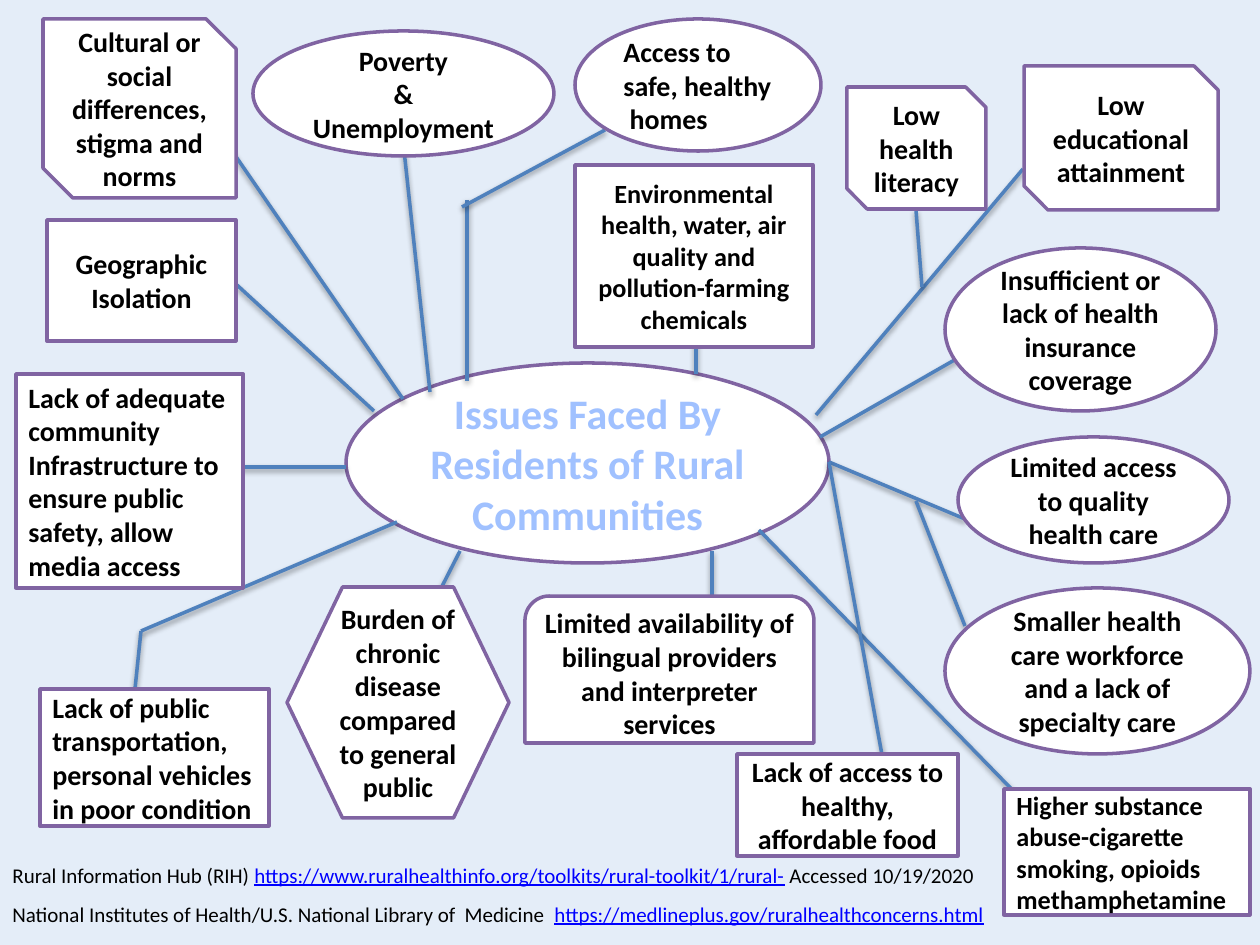
from typing import NamedTuple

from lxml import etree
from pptx import Presentation
from pptx.dml.color import RGBColor
from pptx.enum.shapes import MSO_CONNECTOR as CONN, MSO_SHAPE as SHAPE
from pptx.enum.text import MSO_ANCHOR as ANCHOR, PP_ALIGN as ALIGN
from pptx.oxml import parse_xml
from pptx.util import Emu, Pt

PX = 914400 / 126
NS = "http://schemas.openxmlformats.org/drawingml/2006/main"
SHADOW = (
    f'<a:effectLst xmlns:a="{NS}">'
    '<a:outerShdw blurRad="40000" dist="20000" dir="5400000" rotWithShape="0">'
    '<a:srgbClr val="000000"><a:alpha val="38000"/></a:srgbClr>'
    '</a:outerShdw></a:effectLst>'
)
BLACK, BLUE, PURPLE = "000000", "4F81BD", "8064A2"
LINK = {"color": "0000FF", "underline": True}


class Box(NamedTuple):
    kind: SHAPE
    x: int
    y: int
    w: int
    h: int
    text: str
    size: int = 16
    align: ALIGN = ALIGN.CENTER
    color: str = BLACK


class Link(NamedTuple):
    x1: int
    y1: int
    x2: int
    y2: int


class Source(NamedTuple):
    y: int
    w: int
    runs: list


TOPIC = Box(SHAPE.OVAL, 346, 363, 483, 200,
            "Issues Faced By Residents of Rural Communities", 24, color="A0C1FF")

ISSUES = [
    Box(SHAPE.SNIP_2_DIAG_RECTANGLE, 43, 19, 193, 179,
        "Cultural or social differences, stigma and norms"),
    Box(SHAPE.OVAL, 253, 31, 301, 125, "Poverty\n&\nUnemployment"),
    Box(SHAPE.OVAL, 575, 19, 246, 132, "Access to safe, healthy\v homes",
        align=ALIGN.LEFT),
    Box(SHAPE.SNIP_2_DIAG_RECTANGLE, 847, 87, 139, 122, "Low health literacy"),
    Box(SHAPE.SNIP_2_DIAG_RECTANGLE, 1024, 66, 194, 144,
        "Low educational attainment"),
    Box(SHAPE.RECTANGLE, 47, 220, 189, 121, "Geographic\nIsolation"),
    Box(SHAPE.RECTANGLE, 575, 165, 238, 182,
        "Environmental health, water, air quality and "
        "pollution-farming chemicals", 15),
    Box(SHAPE.OVAL, 945, 248, 271, 163,
        "Insufficient or lack of health insurance coverage"),
    Box(SHAPE.RECTANGLE, 16, 374, 227, 214,
        "Lack of adequate community Infrastructure to\n"
        "ensure public safety, allow media access", align=ALIGN.LEFT),
    Box(SHAPE.OVAL, 958, 437, 271, 126, "Limited access to quality health care"),
    Box(SHAPE.HEXAGON, 287, 587, 222, 231,
        "Burden of chronic disease compared to general public"),
    Box(SHAPE.ROUND_2_SAME_RECTANGLE, 525, 596, 289, 147,
        "Limited availability of bilingual providers and interpreter services"),
    Box(SHAPE.OVAL, 945, 588, 305, 166,
        "Smaller health care workforce and a lack of specialty care"),
    Box(SHAPE.RECTANGLE, 40, 689, 229, 137,
        "Lack of public transportation, personal vehicles in poor condition",
        align=ALIGN.LEFT),
    Box(SHAPE.RECTANGLE, 737, 754, 221, 102,
        "Lack of access to healthy, affordable food"),
    Box(SHAPE.RECTANGLE, 1004, 789, 246, 126,
        "Higher substance\nabuse-cigarette smoking, opioids methamphetamine",
        15, ALIGN.LEFT),
]

LINKS = [
    Link(237, 285, 374, 411), Link(404, 150, 430, 392),
    Link(816, 415, 1023, 169), Link(922, 287, 916, 210),
    Link(397, 522, 141, 631), Link(346, 467, 226, 467),
    Link(141, 631, 135, 689), Link(829, 462, 965, 519),
    Link(820, 437, 958, 358), Link(965, 626, 916, 501),
    Link(430, 610, 460, 551), Link(403, 399, 219, 132),
    Link(712, 551, 712, 669), Link(696, 319, 696, 374),
    Link(759, 530, 1070, 849), Link(829, 462, 882, 755),
    Link(467, 200, 467, 381), Link(462, 207, 605, 130),
]

SOURCES = [
    Source(856, 1000, [
        ("Rural Information Hub (RIH) ", {}),
        ("https://www.ruralhealthinfo.org/toolkits/rural-toolkit/1/rural-", LINK),
        (" Accessed 10/19/2020", {}),
    ]),
    Source(895, 1250, [
        ("National Institutes of Health/U.S. National Library of  Medicine  ", {}),
        ("https://medlineplus.gov/ruralhealthconcerns.html", LINK),
    ]),
]


def px(*values: int) -> list[Emu]:
    return [Emu(round(v * PX)) for v in values]


def rgb(value: str) -> RGBColor:
    return RGBColor.from_string(value)


def style_run(r, size: int, color: str = BLACK, **extra) -> None:
    for name, value in {"name": "Calibri", "size": Pt(size), **extra}.items():
        setattr(r.font, name, value)
    r.font.color.rgb = rgb(color)


def style_line(line, color: str) -> None:
    line.color.rgb = rgb(color)
    line.width = Pt(2)


def draw_box(s, box: Box) -> None:
    sp = s.shapes.add_shape(box.kind, *px(box.x, box.y, box.w, box.h))
    sp.shadow.inherit = False
    sp.fill.solid()
    sp.fill.fore_color.rgb = rgb("FFFFFF")
    style_line(sp.line, PURPLE)
    tf = sp.text_frame
    for name, value in {"word_wrap": True, "vertical_anchor": ANCHOR.MIDDLE,
                        "text": box.text}.items():
        setattr(tf, name, value)
    for p in tf.paragraphs:
        p.alignment = box.align
        for r in p.runs:
            style_run(r, box.size, box.color, bold=True)


def draw_link(s, link: Link) -> None:
    sp = s.shapes.add_connector(CONN.STRAIGHT, *px(*link))
    style_line(sp.line, BLUE)
    etree.ElementBase.append(sp._element.spPr, parse_xml(SHADOW))


def draw_source(s, source: Source) -> None:
    sp = s.shapes.add_textbox(*px(0, source.y, source.w, 38))
    tf = sp.text_frame
    tf.word_wrap = True
    p = tf.paragraphs[0]
    for text, style in source.runs:
        r = p.add_run()
        r.text = text
        style_run(r, 12, **style)


def main() -> None:
    prs = Presentation()
    prs.slide_width, prs.slide_height = px(1260, 945)
    s = prs.slides.add_slide(prs.slide_layouts[6])
    s.background.fill.solid()
    s.background.fill.fore_color.rgb = rgb("E4EDF8")
    draw_box(s, TOPIC)
    for link in LINKS:
        draw_link(s, link)
    for box in ISSUES:
        draw_box(s, box)
    for source in SOURCES:
        draw_source(s, source)
    prs.save("out.pptx")


if __name__ == "__main__":
    main()
